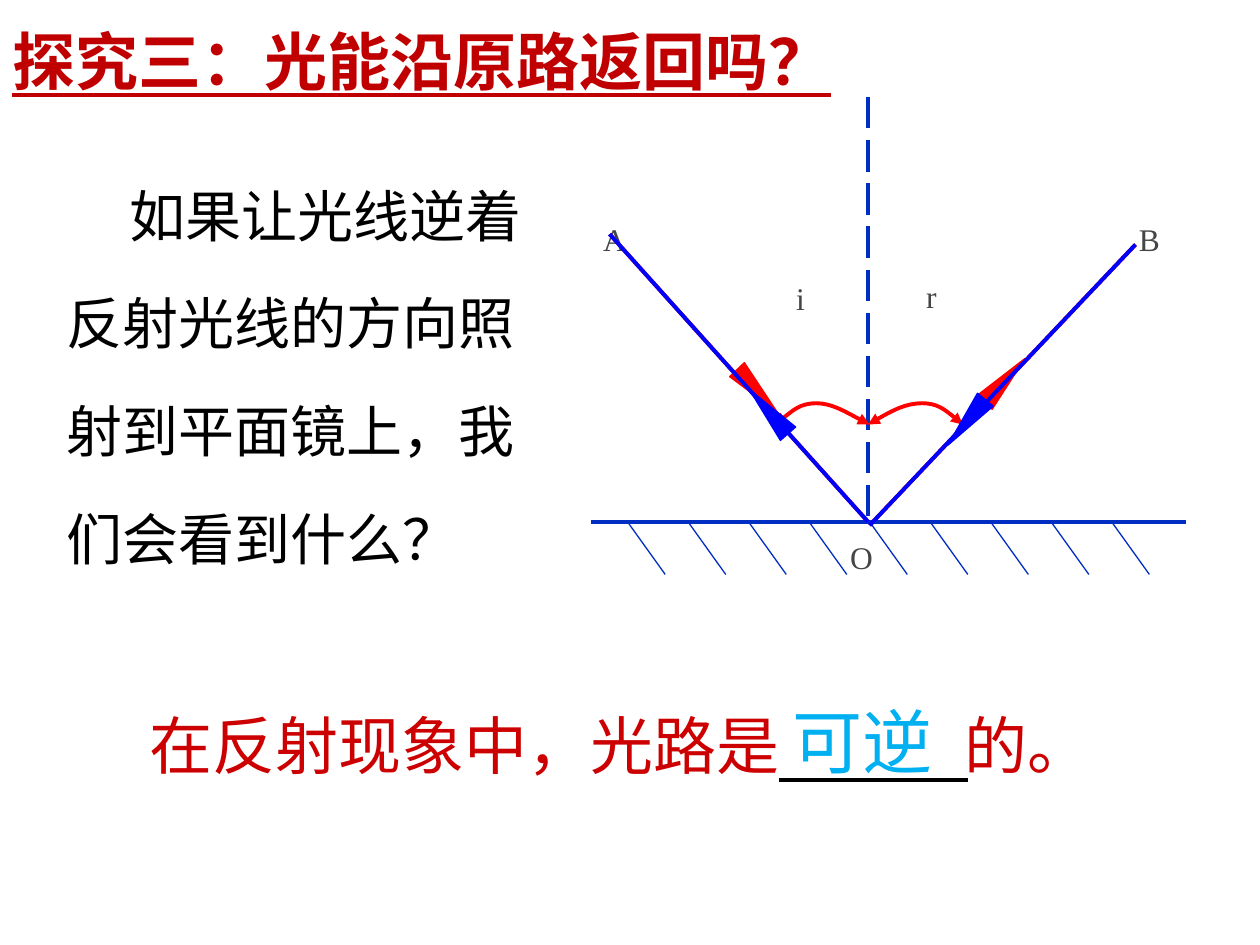
from dataclasses import dataclass

from lxml.etree import SubElement
from pptx import Presentation
from pptx.dml.color import RGBColor as RGB
from pptx.enum.dml import MSO_LINE as DASH
from pptx.enum.shapes import MSO_CONNECTOR as CONN, MSO_SHAPE as SHAPE
from pptx.enum.text import MSO_ANCHOR as ANCHOR, PP_ALIGN as ALIGN
from pptx.oxml.ns import qn
from pptx.util import Cm, Pt


@dataclass(frozen=True)
class Theme:
    title: RGB = RGB(0xC0, 0x00, 0x00)
    body: RGB = RGB(0x00, 0x00, 0x00)
    label: RGB = RGB(0x43, 0x45, 0x47)
    conclusion: RGB = RGB(0xCC, 0x00, 0x00)
    answer: RGB = RGB(0x00, 0xB0, 0xF0)
    mirror: RGB = RGB(0x00, 0x2E, 0xC2)
    forward: RGB = RGB(0xFF, 0x00, 0x00)
    reverse: RGB = RGB(0x00, 0x00, 0xFF)
    title_size: int = 36
    body_size: int = 32
    label_size: int = 18
    answer_size: int = 40
    thick: float = 2.25
    thin: float = 0.75


THEME = Theme()
LATIN = "Times New Roman"

# Key points of the ray diagram, in cm
MIRROR_Y, NORMAL_X = 10.52, 17.5
RAY_A = (12.29, 4.72), (NORMAL_X, MIRROR_Y)
RAY_B = (22.89, 4.93), (17.53, 10.59)
HATCH_X, HATCH_STEP, HATCH_COUNT = 12.65, 1.22, 9
HATCH_DX, HATCH_DY = 0.76, 1.06

LABELS = [
    ("O", 16.89, 10.72),
    ("i", 15.8, 5.51),
    ("r", 18.42, 5.46),
    ("A", 11.91, 4.32),
    ("B", 22.71, 4.32),
]
# Angle arcs: start point, then two cubic curves of three points each
ARCS = [
    [(19.41, 8.56), (19.15, 8.33), (18.9, 8.13), (18.59, 8.13),
     (18.26, 8.13), (17.88, 8.33), (17.5, 8.56)],
    [(15.62, 8.56), (15.88, 8.36), (16.13, 8.13), (16.46, 8.13),
     (16.76, 8.13), (17.15, 8.36), (17.53, 8.56)],
]


def set_attrs(obj, values):
    for name, value in values.items():
        setattr(obj, name, value)


def add_text(shapes, text, box, font, para=None, frame=None, tab=None):
    """Text box with one paragraph; font, para and frame are format dicts."""
    tf = shapes.add_textbox(*map(Cm, box)).text_frame
    set_attrs(tf, {"word_wrap": True, **(frame or {})})
    p = tf.paragraphs[0]
    if tab:
        tabs = SubElement(p._p.get_or_add_pPr(), qn("a:tabLst"))
        SubElement(tabs, qn("a:tab"), pos=str(Cm(tab)), algn="l")
    set_attrs(p, para or {})
    r = p.add_run()
    r.text = text
    color = font["color"]
    set_attrs(r.font, {k: v for k, v in font.items() if k != "color"})
    r.font.color.rgb = color
    return p


def add_line(shapes, start, end, color, width=THEME.thick, dash=None):
    line = shapes.add_connector(CONN.STRAIGHT, *map(Cm, (*start, *end)))
    line.line.color.rgb = color
    set_attrs(line.line, {"width": Pt(width), "dash_style": dash})
    SubElement(line._element.spPr, qn("a:effectLst"))


def add_ray_head(shapes, left, top, angle, color, apex=0.5):
    sp = shapes.add_shape(SHAPE.ISOSCELES_TRIANGLE, *map(Cm, (left, top, 0.41, 1.19)))
    sp.adjustments[0] = apex
    sp.rotation = angle
    sp.shadow.inherit = False
    sp.fill.solid()
    sp.fill.fore_color.rgb = color
    sp.line.color.rgb = color
    sp.line.width = Pt(THEME.thin)


def add_arc(shapes, points, color):
    """Open curve with an arrowhead at both ends."""
    first, *rest = [(Cm(x), Cm(y)) for x, y in points]
    builder = shapes.build_freeform(*first)
    builder.add_line_segments(rest, close=False)
    sp = builder.convert_to_shape()
    sp.shadow.inherit = False
    sp.fill.background()
    sp.line.color.rgb = color
    sp.line.width = Pt(THEME.thick)
    # Every three line segments become one cubic curve
    segments = list(sp._element.iter(qn("a:lnTo")))
    outline = segments[0].getparent()
    for i in range(0, len(segments), 3):
        curve = SubElement(outline, qn("a:cubicBezTo"))
        for segment in segments[i:i + 3]:
            curve.append(segment[0])
            outline.remove(segment)
    ln = sp.line._get_or_add_ln()
    for end in ("a:headEnd", "a:tailEnd"):
        SubElement(ln, qn(end), type="triangle")


def add_diagram(shapes):
    # Incident and reflected rays, normal, angles
    add_ray_head(shapes, 15.06, 7.29, 136.7, THEME.forward)
    add_ray_head(shapes, 20.07, 7.09, 44.8, THEME.forward, apex=0.385)
    add_line(shapes, (NORMAL_X, 10.41), (NORMAL_X, 1.73), THEME.mirror,
             dash=DASH.LONG_DASH)
    for ray in (RAY_A, RAY_B):
        add_line(shapes, *ray, THEME.forward)
    for points in ARCS:
        add_arc(shapes, points, THEME.forward)
    # Mirror with hatching
    add_line(shapes, (11.91, MIRROR_Y), (23.9, MIRROR_Y), THEME.mirror)
    for i in range(HATCH_COUNT):
        x = HATCH_X + i * HATCH_STEP
        add_line(shapes, (x + HATCH_DX, MIRROR_Y + HATCH_DY), (x, MIRROR_Y),
                 THEME.mirror, THEME.thin)
    # Labels
    font = {"name": LATIN, "size": Pt(THEME.label_size), "color": THEME.label}
    for text, left, top in LABELS:
        add_text(shapes, text, (left, top, 1.22, 1.45), font)


def add_reverse_ray(shapes, ray, left, top, angle):
    add_ray_head(shapes, left, top, angle, THEME.reverse)
    add_line(shapes, *ray, THEME.reverse)


def add_conclusion(shapes):
    # The tab leaves room for the answer above the blank line
    add_text(shapes, "在反射现象中，光路是\t的。", (2.11, 14.12, 20.8, 1.78),
             {"name": "Arial", "size": Pt(THEME.title_size), "color": THEME.conclusion},
             frame={"margin_left": Cm(0.91)}, tab=16.43)
    add_line(shapes, (15.7, 15.72), (19.51, 15.72), THEME.body)


def main():
    prs = Presentation()
    set_attrs(prs, {"slide_width": Cm(25.4), "slide_height": Cm(19.05)})
    shapes = prs.slides.add_slide(prs.slide_layouts[6]).shapes

    add_diagram(shapes.add_group_shape().shapes)

    # Question
    p = add_text(shapes, "如果让光线逆着反射光线的方向照射到平面镜上，我们会看到什么？",
                 (1.09, 2.72, 9.8, 8.92),
                 {"name": "Arial", "size": Pt(THEME.body_size), "color": THEME.body},
                 para={"line_spacing": 1.6})
    p._p.get_or_add_pPr().set("indent", str(Cm(1.27)))

    # Light sent back along the same path
    add_reverse_ray(shapes.add_group_shape().shapes, RAY_A, 15.29, 7.7, 318.8)
    add_reverse_ray(shapes.add_group_shape().shapes, RAY_B, 19.28, 7.92, 219.5)

    # Conclusion and its answer
    add_conclusion(shapes.add_group_shape().shapes)
    add_text(shapes, "可逆", (14.5, 14.12, 5.79, 1.6),
             {"name": LATIN, "size": Pt(THEME.answer_size), "color": THEME.answer},
             para={"alignment": ALIGN.CENTER},
             frame={"vertical_anchor": ANCHOR.MIDDLE})

    # Title
    add_text(shapes, "探究三：光能沿原路返回吗？", (0, 0.33, 23.75, 1.78),
             {"name": "Calibri", "size": Pt(THEME.title_size), "bold": True,
              "underline": True, "color": THEME.title})

    prs.save("out.pptx")


if __name__ == "__main__":
    main()
